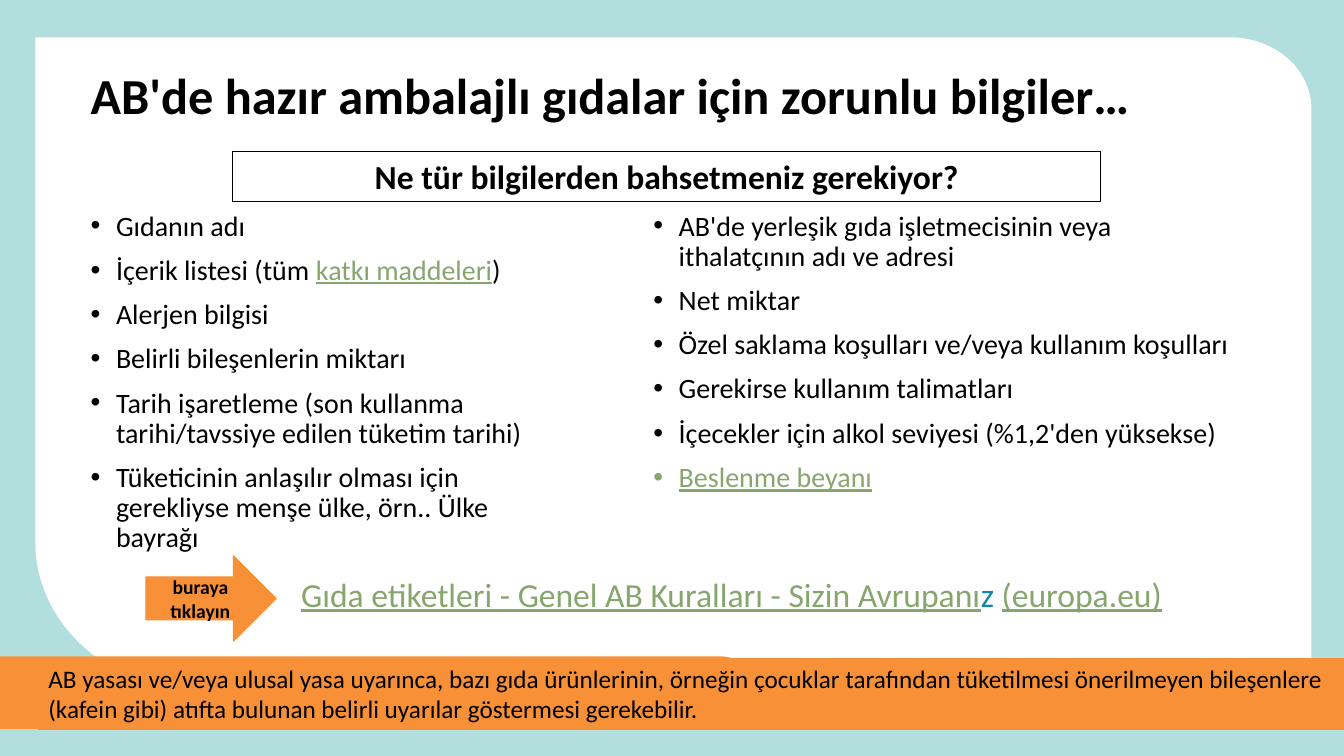
from collections import namedtuple
from math import cos, radians, sin

from lxml.etree import SubElement
from pptx import Presentation
from pptx.dml.color import RGBColor
from pptx.enum.shapes import MSO_SHAPE as Preset
from pptx.enum.text import MSO_ANCHOR as Anchor, MSO_AUTO_SIZE as AutoSize, PP_ALIGN as Align
from pptx.oxml.ns import qn
from pptx.util import Cm, Pt

AQUA = RGBColor(0xB2, 0xDE, 0xDD)
WHITE = RGBColor(0xFF, 0xFF, 0xFF)
ORANGE = RGBColor(0xF7, 0x90, 0x37)
BLACK = RGBColor(0x00, 0x00, 0x00)
GREEN = RGBColor(0x87, 0xA6, 0x6E)
BLUE = RGBColor(0x11, 0x88, 0xA3)
FONT = "Calibri"

# All lengths in centimetres
Box = namedtuple("Box", "left top width height")
Span = namedtuple("Span", "text color underline", defaults=(BLACK, False))

LEFT_ITEMS = [
    [Span("Gıdanın adı")],
    [Span("İçerik listesi (tüm "), Span("katkı maddeleri", GREEN, True), Span(")")],
    [Span("Alerjen bilgisi")],
    [Span("Belirli bileşenlerin miktarı")],
    [Span("Tarih işaretleme (son kullanma tarihi/tavssiye edilen tüketim tarihi)")],
    [Span("Tüketicinin anlaşılır olması için gerekliyse menşe ülke, örn.. Ülke bayrağı")],
]
RIGHT_ITEMS = [
    [Span("AB'de yerleşik gıda işletmecisinin veya ithalatçının adı ve adresi")],
    [Span("Net miktar")],
    [Span("Özel saklama koşulları ve/veya kullanım koşulları")],
    [Span("Gerekirse kullanım talimatları")],
    [Span("İçecekler için alkol seviyesi (%1,2'den yüksekse)")],
    [Span("Beslenme beyanı", GREEN, True)],
]
LINK = [
    Span("Gıda etiketleri - Genel AB Kuralları - Sizin Avrupanı", GREEN, True),
    Span("z ", BLUE),
    Span("(europa.eu)", GREEN, True),
]
WARNING = [Span(
    "AB yasası ve/veya ulusal yasa uyarınca, bazı gıda ürünlerinin, örneğin çocuklar "
    "tarafından tüketilmesi önerilmeyen bileşenlere (kafein gibi) atıfta bulunan belirli "
    "uyarılar göstermesi gerekebilir."
)]


def lengths(box):
    return [Cm(value) for value in box]


def move(shape, box):
    shape.left, shape.top, shape.width, shape.height = lengths(box)


def add_spans(para, spans, size, bold=False):
    for span in spans:
        run = para.add_run()
        run.text = span.text
        run.font.name = FONT
        run.font.size = Pt(size)
        run.font.bold = bold
        run.font.underline = span.underline
        run.font.color.rgb = span.color


def prepare_frame(shape, anchor=Anchor.TOP):
    frame = shape.text_frame
    frame.word_wrap = True
    frame.auto_size = AutoSize.NONE
    frame.vertical_anchor = anchor
    return frame


def paint(shape, fill=None, line=None, width=0.75):
    shape.shadow.inherit = False
    if fill is None:
        shape.fill.background()
    else:
        shape.fill.solid()
        shape.fill.fore_color.rgb = fill
    if line is None:
        shape.line.fill.background()
    else:
        shape.line.color.rgb = line
        shape.line.width = Pt(width)


def add_label(page, preset, box, spans, size, fill=None, line=None, bold=False,
              align=Align.LEFT, anchor=Anchor.TOP):
    shape = page.shapes.add_shape(preset, *lengths(box))
    paint(shape, fill, line)
    para = prepare_frame(shape, anchor).paragraphs[0]
    para.alignment = align
    add_spans(para, spans, size, bold)


def arc(center_x, center_y, radius_x, radius_y, start, steps=24):
    """Points of a clockwise quarter ellipse, from the start angle in degrees."""
    angles = [radians(start + 90 * step / steps) for step in range(steps + 1)]
    return [(Cm(center_x + radius_x * cos(angle)), Cm(center_y + radius_y * sin(angle)))
            for angle in angles]


def add_panel(page, box):
    """White panel with its top right and bottom left corners rounded."""
    right, bottom = box.left + box.width, box.top + box.height
    top_x, top_y = 2.06, 1.8
    low_x, low_y = 4.32, 3.78
    outline = [
        *arc(right - top_x, box.top + top_y, top_x, top_y, -90),
        (Cm(right), Cm(bottom)),
        *arc(box.left + low_x, bottom - low_y, low_x, low_y, 90),
    ]
    builder = page.shapes.build_freeform(Cm(box.left), Cm(box.top))
    builder.add_line_segments(outline, close=True)
    paint(builder.convert_to_shape(), WHITE)


def add_heading(page, box):
    """Title and the framed question below it."""
    title = page.shapes.title
    move(title, box._replace(height=1.63))
    para = prepare_frame(title).paragraphs[0]
    para.alignment = Align.LEFT
    para.line_spacing = 0.8
    add_spans(para, [Span("AB'de hazır ambalajlı gıdalar için zorunlu bilgiler…")], 36, True)
    question = Box(box.left + 3.84, box.top + 2.03, 21.87, 1.27)
    add_label(page, Preset.RECTANGLE, question,
              [Span("Ne tür bilgilerden bahsetmeniz gerekiyor?")], 24,
              line=BLACK, bold=True, align=Align.CENTER)


def fill_list(holder, box, items):
    """Bulleted list in a body placeholder."""
    move(holder, box)
    frame = prepare_frame(holder)
    for index, spans in enumerate(items):
        para = frame.add_paragraph() if index else frame.paragraphs[0]
        properties = para._p.get_or_add_pPr()
        properties.set("marL", str(Cm(0.64)))
        properties.set("indent", str(-Cm(0.64)))
        SubElement(properties, qn("a:buFont")).set("typeface", "Arial")
        SubElement(properties, qn("a:buChar")).set("char", "•")
        para.line_spacing = 0.9
        para.space_before = Pt(10 if index else 0)
        add_spans(para, spans, 20)


def add_link_row(page, box):
    """Arrow pointing at the link text."""
    add_label(page, Preset.RIGHT_ARROW, box._replace(width=3.28),
              [Span("buraya tıklayın")], 14, ORANGE, ORANGE, True,
              Align.CENTER, Anchor.MIDDLE)
    offset = 3.66
    link = page.shapes.add_textbox(
        *lengths(Box(box.left + offset, box.top + 0.33, box.width - offset, 1.27)))
    add_spans(prepare_frame(link).paragraphs[0], LINK, 24)


def add_footer(page, box):
    """Rounded tab and the warning band over it."""
    tab = page.shapes.add_shape(Preset.ROUND_1_RECTANGLE,
                                *lengths(box._replace(width=19.08, height=1.83)))
    tab.adjustments[0] = 0.5
    paint(tab, ORANGE)
    inset = 0.97
    band = Box(box.left + inset, box.top + 0.05, box.width - inset, 1.8)
    add_label(page, Preset.RECTANGLE, band, WARNING, 18, ORANGE, ORANGE)


def build_label_rules(deck):
    page = deck.slides.add_slide(deck.slide_layouts[3])
    page.background.fill.solid()
    page.background.fill.fore_color.rgb = AQUA
    left_list, right_list = page.placeholders[1], page.placeholders[2]
    add_panel(page, Box(0.89, 0.94, 32.16, 16.51))
    add_footer(page, Box(0, 16.54, 33.87, 1.85))
    # Placeholders come to the front of the panel
    for holder in (page.shapes.title, left_list, right_list):
        page.shapes._spTree.append(holder._element)
    add_heading(page, Box(2.03, 1.78, 30.02, 3.3))
    fill_list(left_list, Box(2.03, 5.21, 12.67, 8.74), LEFT_ITEMS)
    fill_list(right_list, Box(16.21, 5.21, 15.01, 7.42), RIGHT_ITEMS)
    add_link_row(page, Box(3.68, 14, 26.72, 2.16))


def main():
    deck = Presentation()
    deck.slide_width, deck.slide_height = Cm(33.87), Cm(19.05)
    build_label_rules(deck)
    deck.save("out.pptx")


if __name__ == "__main__":
    main()
